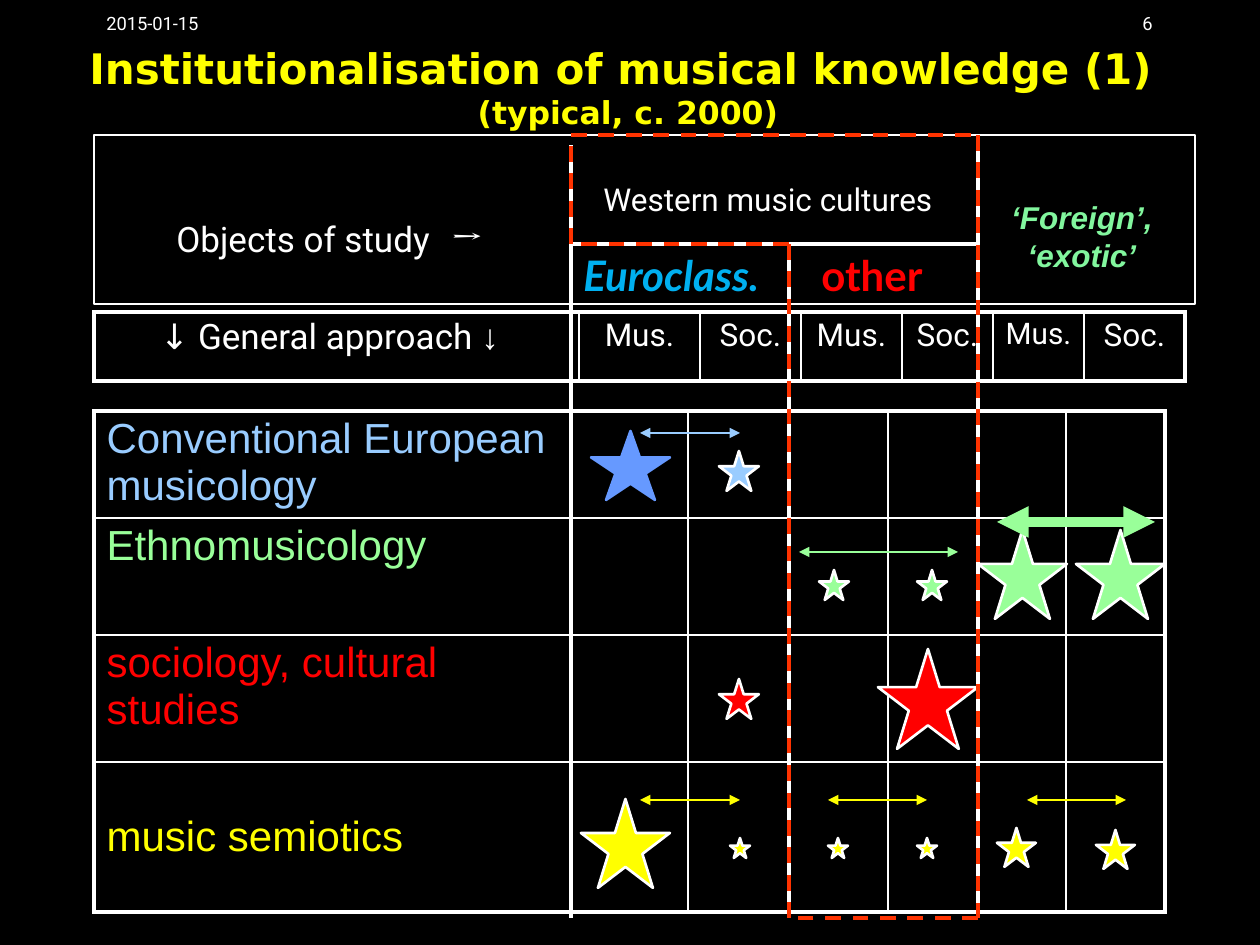
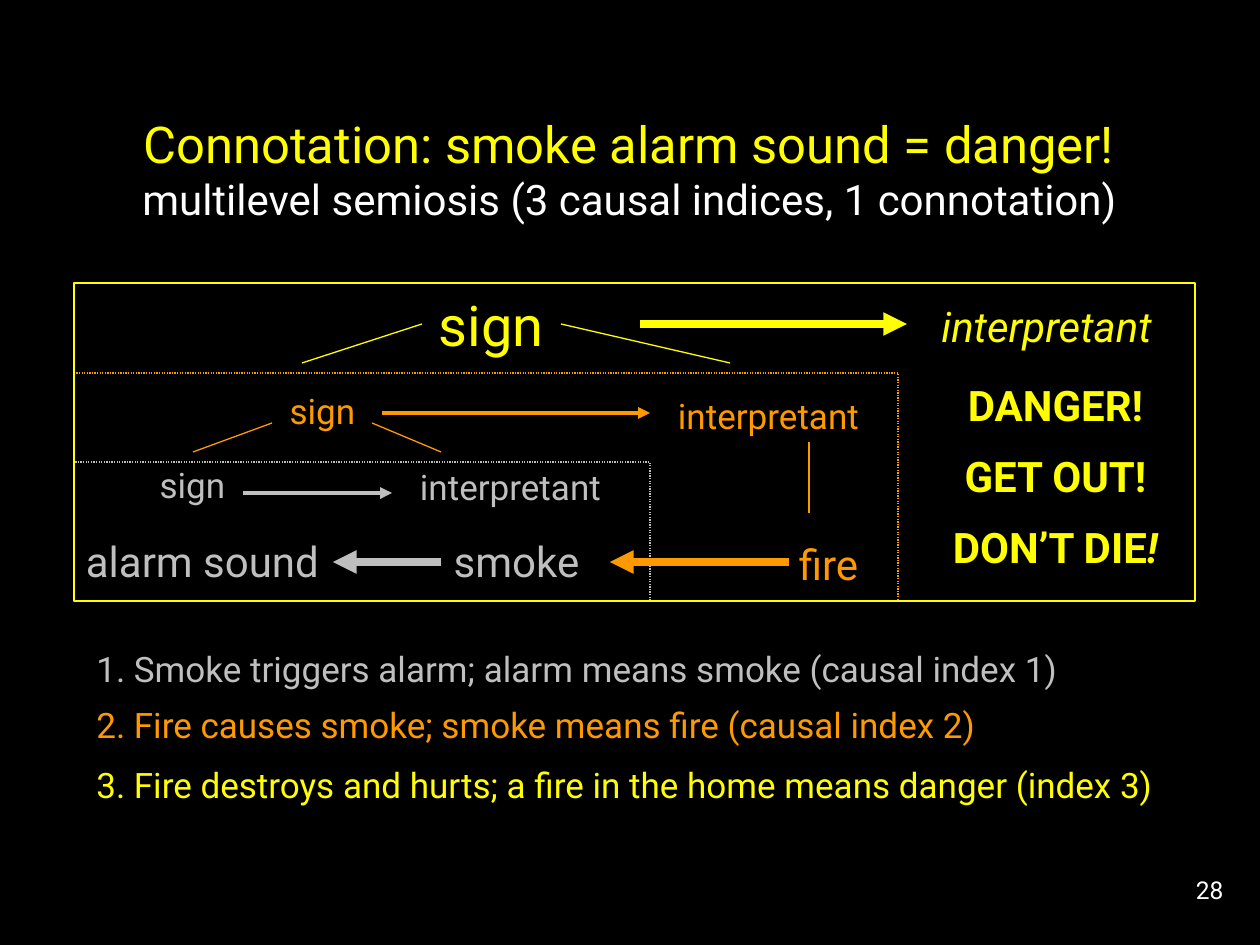
from lxml import etree
from pptx import Presentation
from pptx.dml.color import RGBColor
from pptx.enum.dml import MSO_LINE
from pptx.enum.shapes import MSO_CONNECTOR, MSO_SHAPE
from pptx.enum.text import MSO_ANCHOR, MSO_AUTO_SIZE, PP_ALIGN
from pptx.oxml.ns import qn
from pptx.util import Emu, Pt

LEFT, CENTER, RIGHT = PP_ALIGN.LEFT, PP_ALIGN.CENTER, PP_ALIGN.RIGHT
TOP, MIDDLE = MSO_ANCHOR.TOP, MSO_ANCHOR.MIDDLE
STRAIGHT = MSO_CONNECTOR.STRAIGHT
RECT, STAR = MSO_SHAPE.RECTANGLE, MSO_SHAPE.STAR_5_POINT
DASH, DOTS = MSO_LINE.DASH, MSO_LINE.ROUND_DOT
NO_FIT = MSO_AUTO_SIZE.NONE

PX_PER_INCH = 126
TITLE_ONLY = 5
BLACK, WHITE, YELLOW, RED = "000000", "FFFFFF", "FFFF00", "FF0000"
SKY, BLUE, GREEN = "99CCFF", "6699FF", "99FF99"
ORANGE, GREY, DASH_RED = "FF9900", "BFBFBF", "FF3300"


def px(n):
    """Turn px into EMU."""
    return Emu(round(n * 914400 / PX_PER_INCH))


def rgb(color):
    """Turn a hex string into a colour."""
    return RGBColor.from_string(color)


def write(tf, *paragraphs, align=LEFT, anchor=TOP, gap=0, **style):
    """Fill a text frame; a paragraph is a string or a list of (text, overrides)."""
    tf.word_wrap = True
    tf.vertical_anchor = anchor
    for i, runs in enumerate(paragraphs):
        p = tf.add_paragraph() if i else tf.paragraphs[0]
        p.alignment = align
        p.space_before = Pt(gap if i else 0)
        for text, changes in [(runs, {})] if isinstance(runs, str) else runs:
            add_run(p, text, **{**style, **changes})


def add_run(p, text, size=20, font="Roboto", color=WHITE, bold=False, italic=False):
    """Add one formatted run to a paragraph."""
    r = p.add_run()
    r.text = text
    r.font.size, r.font.name = Pt(size), font
    r.font.bold, r.font.italic = bold, italic
    r.font.color.rgb = rgb(color)


def add_text(slide, box, *paragraphs, **style):
    """Add a text box."""
    sp = slide.shapes.add_textbox(*map(px, box))
    write(sp.text_frame, *paragraphs, **style)


def set_title(slide, box, *paragraphs, **style):
    """Place and fill the title placeholder."""
    sp = slide.shapes.title
    sp.left, sp.top, sp.width, sp.height = map(px, box)
    sp.text_frame.auto_size = NO_FIT
    write(sp.text_frame, *paragraphs, align=CENTER, anchor=MIDDLE, **style)


def set_line(line, color, width, dash=None):
    """Format an outline or a connector line."""
    line.color.rgb = rgb(color)
    line.width = Pt(width)
    if dash:
        line.dash_style = dash


def add_shape(slide, kind, box, line, width, fill=None, dash=None):
    """Add a preset shape with an outline and an optional fill."""
    sp = slide.shapes.add_shape(kind, *map(px, box))
    sp.shadow.inherit = False
    if fill:
        sp.fill.solid()
        sp.fill.fore_color.rgb = rgb(fill)
    else:
        sp.fill.background()
    set_line(sp.line, line, width, dash)


def add_star(slide, x, y, size, color, height=None, line=WHITE):
    """Add a five-pointed star."""
    add_shape(slide, STAR, (x, y, size, height or size), line, 1.5, fill=color)


def add_line(slide, x1, y1, x2, y2, color, width, ends=(), dash=None):
    """Add a straight line with arrowheads at the named ends."""
    c = slide.shapes.add_connector(STRAIGHT, *map(px, (x1, y1, x2, y2)))
    set_line(c.line, color, width, dash)
    spPr = c.element.spPr
    for end in ends:
        etree.SubElement(spPr.find(qn("a:ln")), qn(f"a:{end}"), type="triangle")
    etree.SubElement(spPr, qn("a:effectLst"))


def add_border(cell, side, width):
    """Draw one white border of a cell."""
    tcPr = cell._tc.get_or_add_tcPr()
    ln = etree.SubElement(tcPr, qn(f"a:ln{side}"), w=str(Pt(width)))
    fill = etree.SubElement(ln, qn("a:solidFill"))
    etree.SubElement(fill, qn("a:srgbClr"), val=WHITE)


def add_grid(slide, x, y, cols, rows):
    """Add an unfilled table with a thick frame and thin inner lines."""
    frame = slide.shapes.add_table(
        len(rows), len(cols), px(x), px(y), px(sum(cols)), px(sum(rows)))
    table = frame.table
    table.first_row = table.horz_banding = False
    for col, width in zip(table.columns, cols):
        col.width = px(width)
    for row, height in zip(table.rows, rows):
        row.height = px(height)
    for i in range(len(rows)):
        for j in range(len(cols)):
            cell = table.cell(i, j)
            cell.margin_top = cell.margin_bottom = px(5)
            edges = {"L": j == 0, "R": j == len(cols) - 1,
                     "T": i == 0, "B": i == len(rows) - 1}
            for side, outer in edges.items():
                add_border(cell, side, 2.25 if outer else 1)
            cell.fill.background()
    return table


def write_cell(cell, text, anchor=TOP, **style):
    """Fill a table cell."""
    write(cell.text_frame, text, **style)
    cell.vertical_anchor = anchor


def add_approach_tables(slide):
    """Add the table of disciplines and the table of column heads."""
    body = add_grid(slide, 94, 411, (476, 118, 100, 100, 89, 89, 99),
                    (107, 117, 127, 150))
    disciplines = (("Conventional European musicology", SKY, TOP),
                   ("Ethnomusicology", GREEN, TOP),
                   ("sociology, cultural studies", RED, TOP),
                   ("music semiotics", YELLOW, MIDDLE))
    for i, (name, color, anchor) in enumerate(disciplines):
        write_cell(body.cell(i, 0), name, anchor, size=24, font="Arial", color=color)

    head = add_grid(slide, 94, 312, (485, 121, 101, 101, 91, 91, 101), (69,))
    write_cell(head.cell(0, 0), [("↓ General approach ", {}), ("↓", {"font": "Arial"})])
    head.cell(0, 0).margin_left = px(66)
    for j in range(1, 7):
        write_cell(head.cell(0, j), "Mus." if j % 2 else "Soc.",
                   size=17 if j == 5 else 18, align=CENTER)


def add_object_heads(slide):
    """Add the headings for the objects of study."""
    add_text(slide, (571, 243, 230, 63), "Euroclass.", size=24, font="Lato",
             color="00B0F0", bold=True, italic=True)
    add_text(slide, (809, 243, 160, 63), "other", size=24, font="Lato",
             color=RED, bold=True)
    add_text(slide, (591, 174, 387, 50), "Western music cultures", size=18)
    add_text(slide, (164, 211, 280, 56), "Objects of study")
    add_text(slide, (438, 204, 80, 63), "→", size=24, font="Cambria")
    add_text(slide, (978, 192, 208, 86), "‘Foreign’, ‘exotic’", size=18, font="Arial",
             color="82F69E", bold=True, italic=True, align=CENTER)


def build_institutions(slide):
    """Build the slide on institutions of musical knowledge."""
    set_title(slide, (35, 37, 1186, 100),
              "Institutionalisation of musical knowledge (1) ",
              [("(typical, c. 2000)", {"size": 18})],
              size=24, font="DejaVu Sans", color=YELLOW, bold=True)
    add_approach_tables(slide)
    add_object_heads(slide)

    add_star(slide, 591, 431, 79, BLUE, height=69, line=BLUE)
    for x, y, size, color in (
            (719, 451, 40, SKY), (978, 530, 89, GREEN), (1076, 530, 89, GREEN),
            (917, 570, 30, GREEN), (819, 570, 30, GREEN),
            (878, 649, 100, RED), (719, 679, 40, RED),
            (581, 799, 89, YELLOW), (997, 828, 39, YELLOW), (1096, 830, 39, YELLOW),
            (828, 838, 20, YELLOW), (917, 838, 20, YELLOW), (730, 838, 20, YELLOW)):
        add_star(slide, x, y, size, color)

    left, middle, right = 571, 789, 978
    top, split, bottom = 135, 244, 918
    add_shape(slide, RECT, (94, top, 1101, 169), WHITE, 1.5)
    for ends in ((right, top, right, bottom), (left, bottom, left, 145),
                 (left, split, right, split), (middle, bottom, middle, split)):
        add_line(slide, *ends, WHITE, 2.25)
    for x1, x2, y, color, width in (
            (997, 1155, 522, GREEN, 6), (799, 958, 552, GREEN, 1),
            (1027, 1126, 800, YELLOW, 1.5), (828, 927, 800, YELLOW, 1.5),
            (640, 740, 800, YELLOW, 1.5), (640, 740, 433, SKY, 1.5)):
        add_line(slide, x1, y, x2, y, color, width, ("headEnd", "tailEnd"))
    outline = ((left, split), (left, top), (right, top), (right, bottom),
               (middle, bottom), (middle, split), (left, split))
    for start, end in zip(outline, outline[1:]):
        add_line(slide, *start, *end, DASH_RED, 2.25, dash=DASH)

    add_text(slide, (94, 6, 262, 63), "2015-01-15", size=10.5)
    add_text(slide, (903, 6, 262, 63), "6", size=10.5, align=RIGHT)


def build_connotation(slide):
    """Build the slide on the smoke alarm and its connotation."""
    set_title(slide, (94, 108, 1071, 121), "Connotation: smoke alarm sound = danger!",
              [("multilevel semiosis (3 causal indices, 1 connotation)",
                {"size": 24, "color": WHITE})], size=29, color=YELLOW)
    for box, text, size, color in (
            ((422, 284, 139, 81), "sign", 32, YELLOW),
            ((253, 383, 139, 54), "sign", 20, ORANGE),
            ((123, 457, 139, 54), "sign", 20, GREY),
            ((898, 294, 297, 63), "interpretant", 24, YELLOW),
            ((620, 388, 297, 54), "interpretant", 20, ORANGE),
            ((362, 459, 297, 54), "interpretant", 20, GREY),
            ((432, 529, 169, 63), "smoke", 24, GREY),
            ((64, 529, 277, 63), "alarm sound", 24, GREY),
            ((759, 532, 139, 63), "fire", 24, ORANGE)):
        add_text(slide, box, text, size=size, color=color, align=CENTER,
                 italic=text == "interpretant" and color == YELLOW)
    add_text(slide, (917, 373, 277, 217), "DANGER!", "GET OUT!",
             [("DON’T DIE", {}), ("!", {"italic": True})],
             size=24, color=YELLOW, bold=True, align=CENTER, gap=12)

    for y, width, color, dash in ((462, 576, GREY, DOTS), (373, 824, ORANGE, DOTS),
                                  (283, 1121, YELLOW, None)):
        add_shape(slide, RECT, (74, y, width, 601 - y), color, 0.75, dash=dash)
    for ends, color in (((272, 423, 193, 452), ORANGE), ((372, 423, 441, 452), ORANGE),
                        ((809, 442, 809, 513), ORANGE), ((422, 324, 302, 363), YELLOW),
                        ((561, 324, 730, 363), YELLOW)):
        add_line(slide, *ends, color, 0.75)
    for x1, x2, y, color, width in (
            (441, 333, 562, GREY, 4.5), (789, 610, 562, ORANGE, 4.5),
            (243, 392, 493, GREY, 2.25), (382, 650, 413, ORANGE, 2.25),
            (640, 907, 324, YELLOW, 4.5)):
        add_line(slide, x1, y, x2, y, color, width, ("tailEnd",))

    for y, text, color in (
            (641, "1. Smoke triggers alarm; alarm means smoke (causal index 1)", GREY),
            (697, "2. Fire causes smoke; smoke means fire (causal index 2)", ORANGE),
            (757, "3. Fire destroys and hurts; a fire in the home means danger (index 3)",
             YELLOW)):
        add_text(slide, (84, y, 1111, 54), text, color=color)
    add_text(slide, (1147, 869, 89, 63), "28", size=14, align=RIGHT)


def main():
    """Build and save the presentation."""
    prs = Presentation()
    prs.slide_width, prs.slide_height = px(1260), px(945)
    background = prs.slide_master.background.fill
    background.solid()
    background.fore_color.rgb = rgb(BLACK)
    for build in (build_institutions, build_connotation):
        build(prs.slides.add_slide(prs.slide_layouts[TITLE_ONLY]))
    prs.save("out.pptx")


if __name__ == "__main__":
    main()
